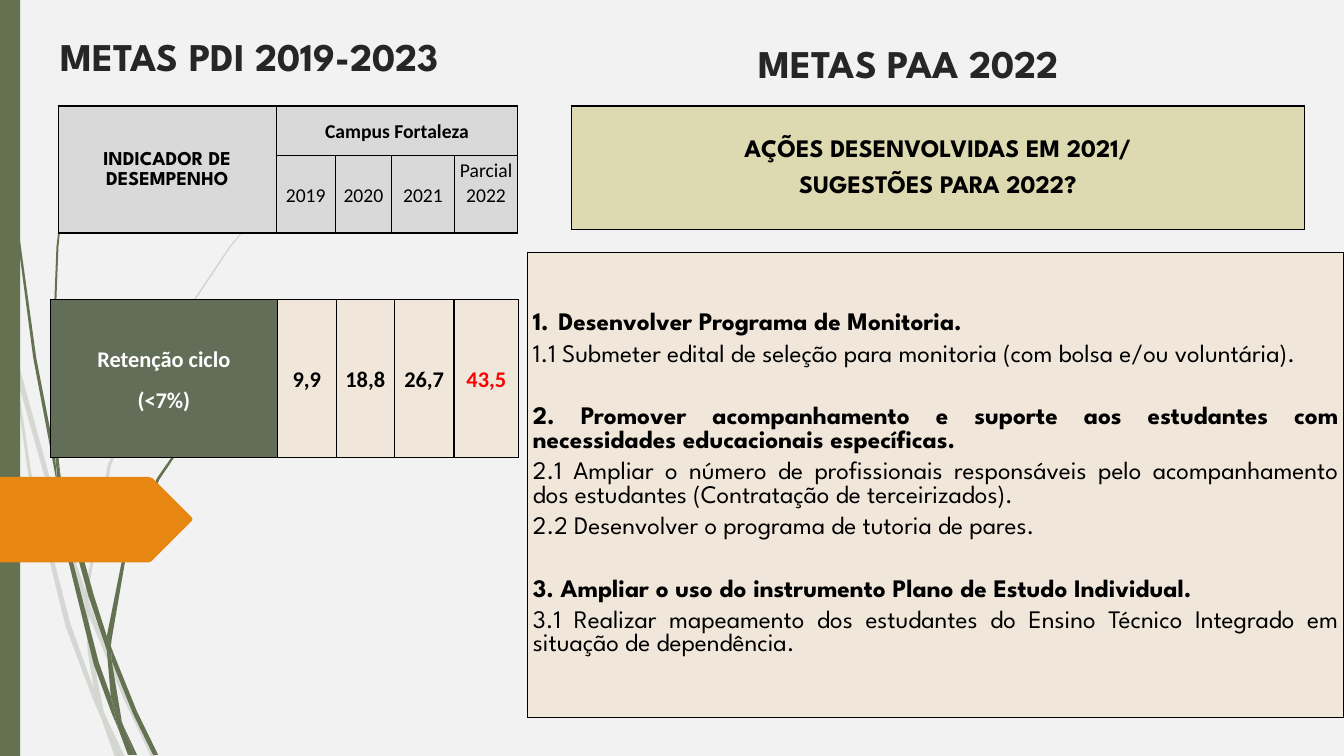
from lxml import etree
from pptx import Presentation
from pptx.dml.color import RGBColor
from pptx.enum import shapes, text
from pptx.oxml import ns
from pptx.util import Cm, Pt

PAPER = RGBColor(0xF2, 0xF2, 0xF2)
MOSS = RGBColor(0x64, 0x72, 0x52)
OLIVE = RGBColor(0x63, 0x6E, 0x58)
ORANGE = RGBColor(0xE7, 0x87, 0x12)
CREAM = RGBColor(0xF0, 0xE7, 0xDA)
KHAKI = RGBColor(0xDD, 0xD9, 0xB0)
GREY = RGBColor(0xD9, 0xD9, 0xD9)
INK = RGBColor(0x26, 0x26, 0x26)
BLACK = RGBColor(0, 0, 0)
WHITE = RGBColor(0xFF, 0xFF, 0xFF)
RED = RGBColor(0xFF, 0, 0)

DISPLAY, PLAIN = "League Spartan", "Calibri"
CENTER, JUSTIFY = text.PP_ALIGN.CENTER, text.PP_ALIGN.JUSTIFY
MIDDLE, TOP, BOTTOM = text.MSO_ANCHOR.MIDDLE, text.MSO_ANCHOR.TOP, text.MSO_ANCHOR.BOTTOM

# Outlines are listed in hundredths of an inch.
OUTLINE_UNIT = Cm(2.54) / 100

PALE_WISPS = [
    [(11, 350), (9, 322), (0, 282), (0, 299), (10, 344)],
    [(58, 522), (84, 599), (85, 586), (62, 520), (14, 345), (17, 376)],
    [(92, 607), (88, 596), (88, 610), (123, 694), (150, 751), (155, 751), (127, 692)],
    [(119, 751), (124, 751), (105, 711)],
    [(93, 683), (70, 619), (31, 469), (17, 376), (11, 350), (28, 470), (65, 621),
     (92, 693), (101, 714), (99, 707)],
    [(84, 599), (87, 646), (93, 683), (96, 692), (105, 711), (103, 706), (91, 646),
     (88, 610), (88, 608)],
    [(88, 584), (110, 462), (160, 349), (229, 245), (268, 198), (290, 175), (312, 154),
     (312, 153), (289, 175), (268, 197), (228, 244), (158, 348), (107, 461), (85, 584),
     (85, 586), (88, 596)],
    [(101, 714), (114, 751), (119, 751)],
    [(88, 608), (88, 610), (88, 596), (85, 586), (84, 599)],
    [(96, 692), (93, 683), (99, 707), (101, 714), (119, 751), (105, 711)],
]
DARK_WISPS = [
    [(7, 110), (17, 233), (33, 355), (56, 477), (57, 481), (55, 457), (55, 453), (36, 355),
     (19, 232), (8, 109), (5, 48), (4, 0), (3, 0), (4, 48)],
    [(88, 592), (106, 645), (106, 633), (106, 631), (93, 590), (60, 472), (64, 505)],
    [(113, 649), (110, 641), (111, 656), (132, 708), (152, 749), (157, 749), (136, 706)],
    [(110, 691), (98, 657), (72, 556), (64, 505), (57, 477), (68, 557), (93, 659),
     (111, 708), (117, 722), (116, 717)],
    [(60, 472), (58, 453), (54, 349), (58, 245), (63, 193), (70, 141), (62, 193),
     (56, 245), (52, 349), (55, 449)],
    [(133, 749), (136, 749), (122, 719)],
    [(57, 477), (64, 505), (60, 472), (55, 449), (55, 453)],
    [(111, 633), (125, 552), (158, 476), (205, 406), (231, 374), (245, 359), (261, 344),
     (260, 344), (245, 358), (231, 373), (204, 405), (156, 474), (122, 551), (106, 631),
     (110, 641)],
    [(117, 722), (127, 749), (131, 749)],
    [(106, 645), (110, 691), (116, 706), (122, 719), (121, 716), (111, 656), (109, 651)],
    [(106, 645), (109, 651), (111, 656), (110, 641), (106, 631), (106, 633)],
    [(116, 706), (110, 691), (116, 717), (117, 722), (130, 749), (133, 749), (122, 719)],
]
ARROW = [(0, 473), (147, 473), (150, 474), (151, 474), (190, 513), (191, 515), (190, 517),
         (151, 556), (150, 557), (147, 558), (0, 558)]


def write(frame, lines, font=DISPLAY, size=18, color=BLACK, bold=True, align=CENTER,
          spacing=None, after=0):
    """Fill a text frame; a line is a string or a (string, own format) pair."""
    for index, line in enumerate(lines):
        wording, own = (line, {}) if isinstance(line, str) else line
        paragraph = frame.paragraphs[0] if index == 0 else frame.add_paragraph()
        paragraph.alignment = align
        paragraph.line_spacing = spacing
        paragraph.space_before = Pt(own.get("before", 0))
        paragraph.space_after = Pt(after)
        if "number" in own:
            properties = paragraph._p.get_or_add_pPr()
            properties.set("marL", str(Cm(0.64)))
            properties.set("indent", str(-Cm(0.64)))
            etree.SubElement(properties, ns.qn("a:buFont"), typeface="+mj-lt")
            etree.SubElement(properties, ns.qn("a:buAutoNum"), type=own["number"])
        run = paragraph.add_run()
        run.text = wording
        run.font.name = font
        run.font.size = Pt(size)
        run.font.bold = own.get("bold", bold)
        run.font.color.rgb = color


class GoalsSlide:
    """The current slide and the style of its elements."""

    def __init__(self, presentation):
        self.slide = presentation.slides.add_slide(presentation.slide_layouts[5])
        self.shapes = self.slide.shapes
        self.slide.background.fill.solid()
        self.slide.background.fill.fore_color.rgb = PAPER

    def paint(self, shape, color, opacity=None):
        shape.shadow.inherit = False
        shape.line.fill.background()
        shape.fill.solid()
        shape.fill.fore_color.rgb = color
        if opacity:
            tint = shape.fill._xPr.find(".//" + ns.qn("a:srgbClr"))
            etree.SubElement(tint, ns.qn("a:alpha"), val=str(opacity * 1000))

    def outline(self, points, color, opacity=None):
        builder = self.shapes.build_freeform(*points[0], scale=OUTLINE_UNIT)
        builder.add_line_segments(points[1:])
        self.paint(builder.convert_to_shape(), color, opacity)

    def bar(self, left, top, width, height, color):
        box = map(Cm, (left, top, width, height))
        self.paint(self.shapes.add_shape(shapes.MSO_SHAPE.RECTANGLE, *box), color)

    def heading(self, wording, left, top, width, height, anchor, shape=None):
        shape = shape or self.shapes.add_textbox(0, 0, 0, 0)
        shape.left, shape.top, shape.width, shape.height = map(Cm, (left, top, width, height))
        frame = shape.text_frame
        frame.word_wrap = True
        frame.auto_size = text.MSO_AUTO_SIZE.NONE
        frame.vertical_anchor = anchor
        write(frame, [wording], size=28, color=INK)

    def table(self, left, top, columns, rows):
        frame = self.shapes.add_table(len(rows), len(columns), Cm(left), Cm(top),
                                      Cm(sum(columns)), Cm(sum(rows)))
        table = frame.table
        table.first_row = table.horz_banding = False
        for column, width in zip(table.columns, columns):
            column.width = Cm(width)
        for row, height in zip(table.rows, rows):
            row.height = Cm(height)
        for cell in table.iter_cells():
            self.frame_cell(cell)
        return table

    def frame_cell(self, cell):
        """Set the margins and the thin black border of a cell."""
        cell.margin_left = cell.margin_right = Cm(0.13)
        cell.margin_top, cell.margin_bottom = Cm(0.03), 0
        properties = cell._tc.get_or_add_tcPr()
        for side in ("lnL", "lnR", "lnT", "lnB"):
            line = etree.SubElement(properties, ns.qn("a:" + side), w=str(Pt(1)))
            fill = etree.SubElement(line, ns.qn("a:solidFill"))
            etree.SubElement(fill, ns.qn("a:srgbClr"), val=str(BLACK))

    def cell(self, cell, lines, fill, anchor=MIDDLE, **style):
        cell.fill.solid()
        cell.fill.fore_color.rgb = fill
        cell.vertical_anchor = anchor
        write(cell.text_frame, lines, **style)


def main():
    presentation = Presentation()
    presentation.slide_width, presentation.slide_height = Cm(33.87), Cm(19.05)
    goals = GoalsSlide(presentation)

    for wisp in PALE_WISPS:
        goals.outline(wisp, MOSS, opacity=20)
    for wisp in DARK_WISPS:
        goals.outline(wisp, MOSS)
    goals.bar(0, 0, 0.51, 19.05, MOSS)
    goals.outline(ARROW, ORANGE)

    retention = goals.table(1.27, 7.55, [5.72, 1.48, 1.47, 1.5, 1.63], [3.98])
    loose = {"spacing": 1.07, "after": 8}
    goals.cell(retention.cell(0, 0), ["Retenção ciclo", "(<7%)"], OLIVE,
               font=PLAIN, size=16, color=WHITE, **loose)
    rates = [("9,9", BLACK), ("18,8", BLACK), ("26,7", BLACK), ("43,5", RED)]
    for column, (rate, color) in enumerate(rates, start=1):
        goals.cell(retention.cell(0, column), [rate], CREAM,
                   font=PLAIN, size=16, color=color, **loose)

    actions = goals.table(13.3, 6.36, [20.57], [11.71])
    detail, next_action = {"bold": False}, {"before": 22}
    goals.cell(actions.cell(0, 0), [
        ("Desenvolver Programa de Monitoria.", {"number": "arabicPeriod"}),
        ("1.1 Submeter edital de seleção para monitoria (com bolsa e/ou voluntária).", detail),
        ("2. Promover acompanhamento e suporte aos estudantes com necessidades "
         "educacionais específicas.", next_action),
        ("2.1 Ampliar o número de profissionais responsáveis pelo acompanhamento dos "
         "estudantes (Contratação de terceirizados).", detail),
        ("2.2 Desenvolver o programa de tutoria de pares.", detail),
        ("3. Ampliar o uso do instrumento Plano de Estudo Individual.", next_action),
        ("3.1 Realizar mapeamento dos estudantes do Ensino Técnico Integrado em "
         "situação de dependência.", detail),
    ], CREAM, align=JUSTIFY, after=6)

    goals.heading("METAS PDI 2019-2023", -0.69, 0.15, 13.97, 2.51, MIDDLE,
                  goals.shapes.title)

    banner = goals.table(14.4, 2.67, [18.47], [3.12])
    goals.cell(banner.cell(0, 0), ["AÇÕES DESENVOLVIDAS EM 2021/", "SUGESTÕES PARA 2022?"],
               KHAKI, **loose)
    goals.heading("METAS PAA 2022", 16.28, 0.53, 13.26, 1.78, BOTTOM)

    header = goals.table(1.47, 2.67, [5.49, 1.49, 1.42, 1.58, 1.6], [1.25, 1.95])
    header.cell(0, 0).merge(header.cell(1, 0))
    header.cell(0, 1).merge(header.cell(0, 4))
    goals.cell(header.cell(0, 0), ["INDICADOR DE DESEMPENHO"], GREY, size=14, **loose)
    goals.cell(header.cell(0, 1), ["Campus Fortaleza"], GREY, font=PLAIN, size=14, spacing=1.07)
    years = [("2019", MIDDLE), ("2020", MIDDLE), ("2021", MIDDLE), ("Parcial 2022", TOP)]
    for column, (year, anchor) in enumerate(years, start=1):
        goals.cell(header.cell(1, column), [year], GREY, anchor,
                   font=PLAIN, size=14, bold=False, spacing=1.07)

    presentation.save("out.pptx")


if __name__ == "__main__":
    main()
